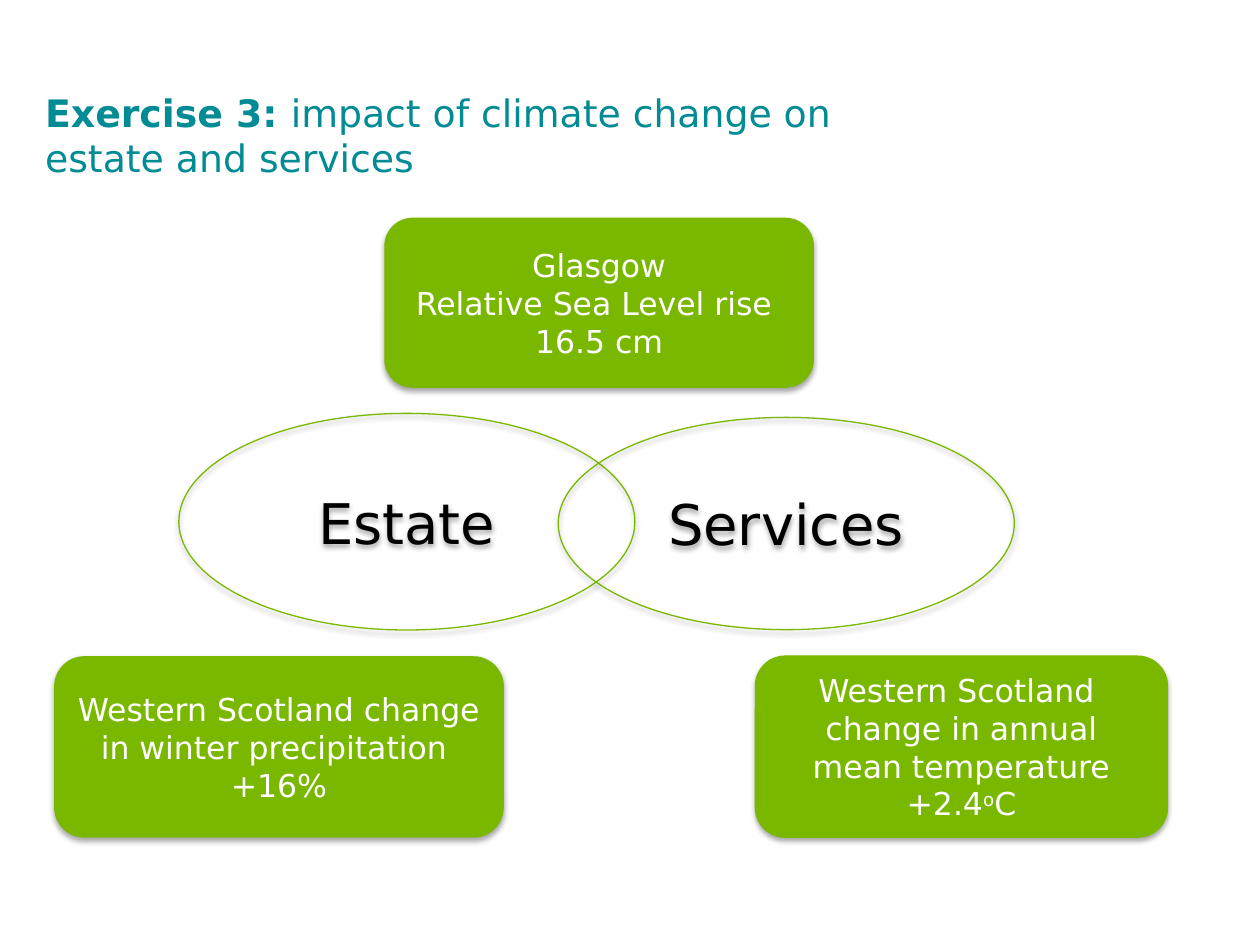
from lxml import etree
from pptx import Presentation
from pptx.dml.color import RGBColor
from pptx.enum import shapes, text
from pptx.oxml import ns
from pptx.util import Pt

FONT = "DejaVu Sans"
TEAL = RGBColor(0x00, 0x8B, 0x95)
GREEN = RGBColor(0x7A, 0xB8, 0x00)
WHITE = RGBColor(0xFF, 0xFF, 0xFF)
BLACK = RGBColor(0x00, 0x00, 0x00)

# Text is a list of paragraphs, each a list of (words, style) runs.
TITLE = [[("Exercise 3: ", "bold"),
          ("impact of climate change on estate and services", "")]]
TITLE_BOX = (18.72, 47.52, 537.84, 46.08)

# (left, top, width, height), paragraphs
IMPACTS = [
    ((219.6, 124.4, 245.5, 97.2),
     [[("Glasgow", "")], [("Relative Sea Level rise ", "")], [("16.5 cm", "")]]),
    ((30.96, 375, 257, 103.7),
     [[("Western Scotland change in winter precipitation ", "")], [("+16%", "")]]),
    ((431.3, 374.6, 236.2, 104.2),
     [[("Western Scotland ", "")],
      [("change in annual mean temperature +2.4", ""), ("o", "super"), ("C", "")]]),
]
AREAS = [
    ((102.2, 236.2, 260.6, 123.8), [[("Estate", "")]]),
    ((319, 238.5, 260.6, 121.3), [[("Services", "")]]),
]

SHADOW = """<a:effectLst xmlns:a="%s">
<a:outerShdw blurRad="%d" dist="%d" dir="5400000" rotWithShape="0">
<a:srgbClr val="000000"><a:alpha val="35000"/></a:srgbClr>
</a:outerShdw></a:effectLst>""" % (ns.namespaces("a")["a"], Pt(3.1), Pt(1.8))


def write(frame, paragraphs, size, color, align):
    frame.word_wrap = True
    for index, runs in enumerate(paragraphs):
        paragraph = frame.paragraphs[0] if index == 0 else frame.add_paragraph()
        paragraph.alignment = align
        for words, style in runs:
            run = paragraph.add_run()
            run.text = words
            run.font.name = FONT
            run.font.size = Pt(size)
            run.font.color.rgb = color
            run.font.bold = style == "bold"
            if style == "super":
                run.font._element.set("baseline", "30000")


def add_bubble(slide, kind, box, paragraphs, size, color, fill=None):
    """Add a shadowed shape: filled without a line, or outlined in green."""
    bubble = slide.shapes.add_shape(kind, *map(Pt, box))
    if fill is None:
        bubble.fill.background()
        bubble.line.color.rgb = GREEN
        bubble.line.width = Pt(0.75)
    else:
        bubble.fill.solid()
        bubble.fill.fore_color.rgb = fill
        bubble.line.fill.background()
    bubble._element.spPr.append(etree.fromstring(SHADOW))
    bubble.text_frame.vertical_anchor = text.MSO_ANCHOR.MIDDLE
    write(bubble.text_frame, paragraphs, size, color, text.PP_ALIGN.CENTER)


def main():
    deck = Presentation()
    deck.slide_width, deck.slide_height = Pt(720), Pt(540)
    slide = deck.slides.add_slide(deck.slide_layouts[6])

    title = slide.shapes.add_textbox(*map(Pt, TITLE_BOX))
    write(title.text_frame, TITLE, 21.6, TEAL, text.PP_ALIGN.LEFT)

    for box, paragraphs in AREAS:
        add_bubble(slide, shapes.MSO_SHAPE.OVAL, box, paragraphs, 32, BLACK)
    for box, paragraphs in IMPACTS:
        add_bubble(slide, shapes.MSO_SHAPE.ROUNDED_RECTANGLE, box, paragraphs,
                   18, WHITE, GREEN)

    deck.save("out.pptx")


if __name__ == "__main__":
    main()
